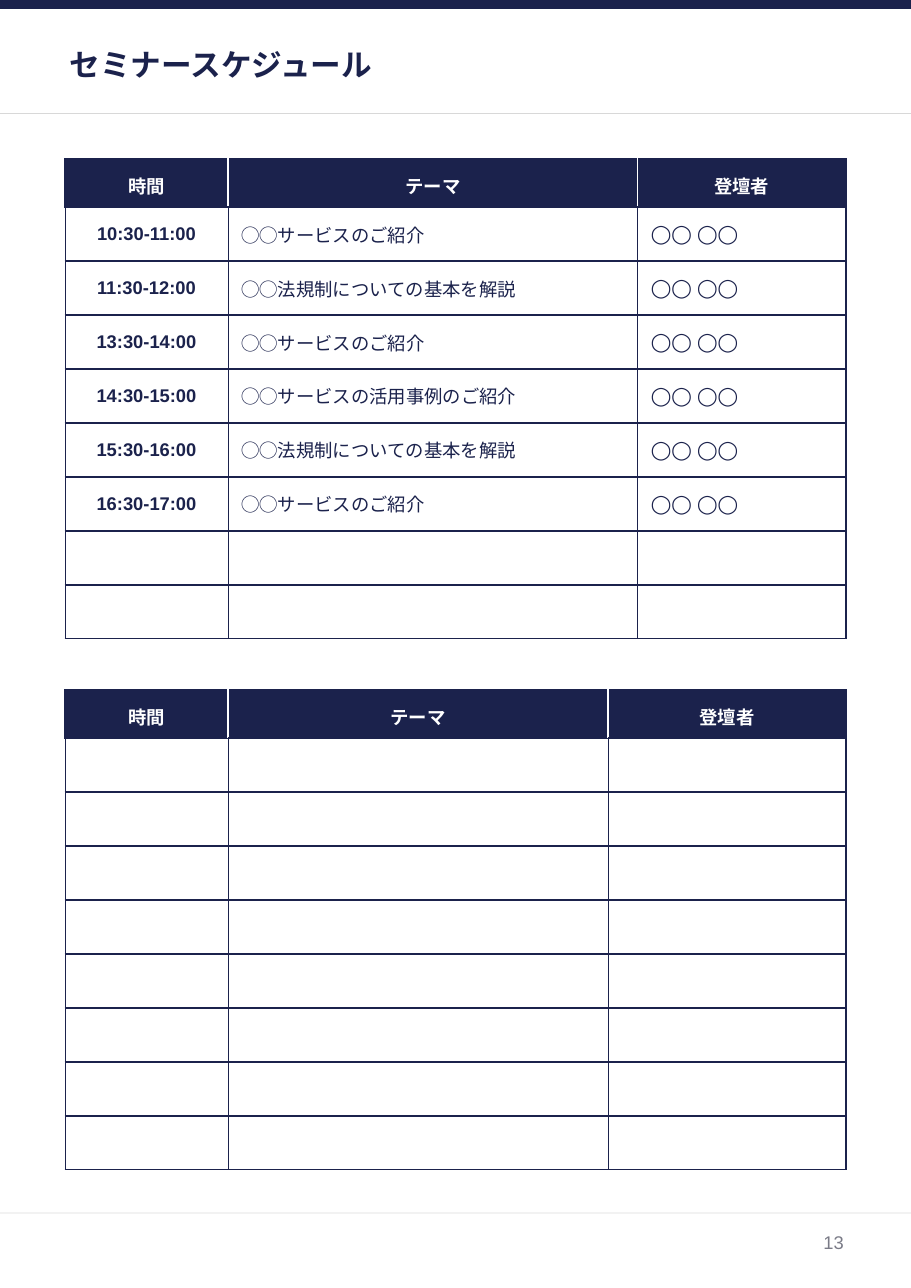
import pptx
import pptx.dml.color
import pptx.enum.lang
import pptx.enum.shapes
import pptx.enum.text
import pptx.oxml
import pptx.oxml.ns
import pptx.util
import lxml.etree

Inches = pptx.util.Inches
Pt = pptx.util.Pt
RGBColor = pptx.dml.color.RGBColor
ALIGN = pptx.enum.text.PP_ALIGN
MIDDLE = pptx.enum.text.MSO_ANCHOR.MIDDLE
JAPAN = pptx.enum.lang.MSO_LANGUAGE_ID.JAPANESE

NAVY = RGBColor(0x1B, 0x22, 0x4C)
WHITE = RGBColor(0xFF, 0xFF, 0xFF)
GREY = RGBColor(0x7A, 0x7B, 0x87)
RULE = RGBColor(0xD8, 0xD8, 0xD8)
PALE = RGBColor(0xF2, 0xF2, 0xF2)

WIDTH, HEIGHT = 8.27, 11.69
LEFT, SPAN = 0.59, 7.09
HEAD, ROW = 0.4, 0.49

TITLE = "セミナースケジュール"
PAGE = "13"
LABELS = ("時間", "テーマ", "登壇者")
GUEST = "◯◯ ◯◯"
INTRO = "◯◯サービスのご紹介"
RULES = "◯◯法規制についての基本を解説"
CASES = "◯◯サービスの活用事例のご紹介"
BLANK = ("", "", "")
TALKS = [
    ("10:30-11:00", INTRO, GUEST),
    ("11:30-12:00", RULES, GUEST),
    ("13:30-14:00", INTRO, GUEST),
    ("14:30-15:00", CASES, GUEST),
    ("15:30-16:00", RULES, GUEST),
    ("16:30-17:00", INTRO, GUEST),
]
TABLES = [
    (1.44, (1.48, 3.72, 1.89), [LABELS] + TALKS + [BLANK] * 2),
    (6.26, (1.48, 3.45, 2.16), [LABELS] + [BLANK] * 8),
]
LINES = [(11.01, PALE), (1.03, RULE)]
NOTES = [
    (TITLE, (LEFT, 0.35, SPAN, 0.47), ALIGN.LEFT, 20, NAVY, True),
    (PAGE, (5.84, 11.12, 1.86, 0.31), ALIGN.RIGHT, 12, GREY, False),
]
SIDES = ("left", "right", "top", "bottom")


def assign(item, values):
    for name, value in values.items():
        setattr(item, name, value)


def write(frame, text, align, size, color, bold):
    para = frame.paragraphs[0]
    para.alignment = align
    run = para.add_run()
    run.text = text
    assign(run.font, {"name": "Arial", "size": Pt(size), "bold": bold,
                      "language_id": JAPAN})
    run.font.color.rgb = color


def edge(cell, side, color, width):
    props = cell._tc.get_or_add_tcPr()
    line = lxml.etree.SubElement(props, pptx.oxml.ns.qn("a:ln" + side),
                                 w=str(Pt(width)))
    fill = lxml.etree.SubElement(line, pptx.oxml.ns.qn("a:solidFill"))
    lxml.etree.SubElement(fill, pptx.oxml.ns.qn("a:srgbClr"), val=str(color))


def style(cell, text, row, col, last):
    top = row == 0
    for side, outer in (("L", col == 0), ("R", col == last)):
        color = WHITE if top and not outer else NAVY
        thick = top or (side == "R" and outer)
        edge(cell, side, color, 1 if thick else 0.75)
    for side in "TB":
        edge(cell, side, NAVY, 1)
    cell.fill.solid()
    cell.fill.fore_color.rgb = NAVY if top else WHITE
    cell.vertical_anchor = MIDDLE
    if text:
        assign(cell, {"margin_" + side: Inches(0.12) for side in SIDES})
        strong = top or col == 0
        write(cell.text_frame, text, ALIGN.CENTER if strong else ALIGN.LEFT,
              12, WHITE if top else NAVY, strong)


def build_table(slide, top, widths, rows):
    high = HEAD + ROW * (len(rows) - 1)
    grid = slide.shapes.add_table(len(rows), len(widths), Inches(LEFT),
                                  Inches(top), Inches(SPAN), Inches(high)).table
    assign(grid, {"first_row": False, "horz_banding": False})
    for col, width in enumerate(widths):
        grid.columns[col].width = Inches(width)
    for row, texts in enumerate(rows):
        grid.rows[row].height = Inches(ROW if row else HEAD)
        for col, text in enumerate(texts):
            style(grid.cell(row, col), text, row, col, len(widths) - 1)


def main():
    deck = pptx.Presentation()
    assign(deck, {"slide_width": Inches(WIDTH), "slide_height": Inches(HEIGHT)})
    slide = deck.slides.add_slide(deck.slide_layouts[6])
    shapes = slide.shapes

    band = shapes.add_shape(pptx.enum.shapes.MSO_SHAPE.RECTANGLE, 0, 0,
                            Inches(WIDTH), Inches(0.08))
    band.shadow.inherit = False
    band.fill.solid()
    band.fill.fore_color.rgb = NAVY
    band.line.fill.background()

    for y, color in LINES:
        line = shapes.add_connector(pptx.enum.shapes.MSO_CONNECTOR.STRAIGHT,
                                    0, Inches(y), Inches(WIDTH), Inches(y))
        line.line.color.rgb = color
        line.line.width = Pt(0.75)
        lxml.etree.SubElement(line._element.spPr,
                              pptx.oxml.ns.qn("a:effectLst"))

    for text, place, *look in NOTES:
        frame = shapes.add_textbox(*map(Inches, place)).text_frame
        assign(frame, {"word_wrap": True, "vertical_anchor": MIDDLE})
        assign(frame, {"margin_" + side: Inches(0.04) for side in SIDES})
        write(frame, text, *look)

    for top, widths, rows in TABLES:
        build_table(slide, top, widths, rows)

    deck.save("out.pptx")


if __name__ == "__main__":
    main()
